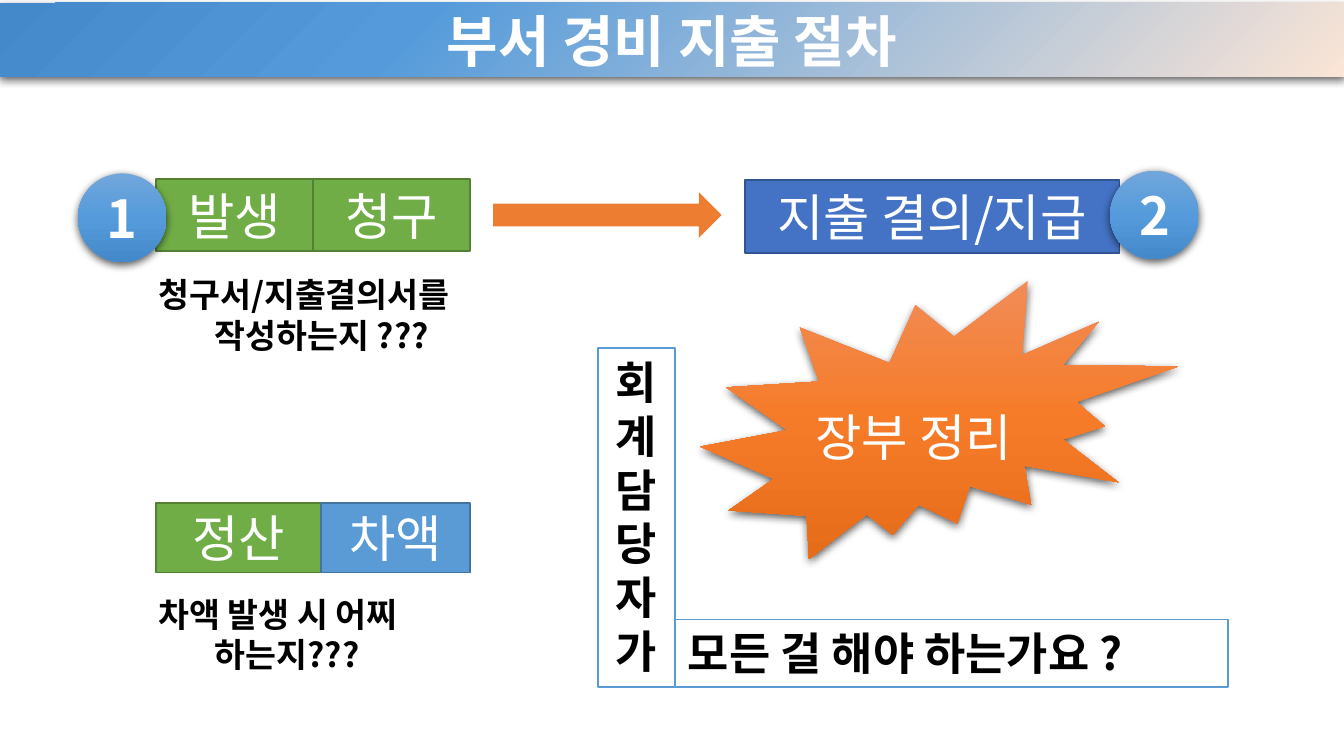
from dataclasses import dataclass

from lxml import etree
from pptx import Presentation
from pptx.dml.color import RGBColor
from pptx.enum.shapes import MSO_SHAPE
from pptx.enum.text import MSO_ANCHOR, PP_ALIGN
from pptx.oxml.ns import qn
from pptx.util import Inches, Pt

RECTANGLE, OVAL = MSO_SHAPE.RECTANGLE, MSO_SHAPE.OVAL
ARROW, BURST = MSO_SHAPE.RIGHT_ARROW, MSO_SHAPE.EXPLOSION2
LEFT, CENTER = PP_ALIGN.LEFT, PP_ALIGN.CENTER
TOP, MIDDLE = MSO_ANCHOR.TOP, MSO_ANCHOR.MIDDLE


@dataclass(frozen=True)
class Theme:
    """Colours and type sizes of the slide."""
    font: str = "Noto Sans CJK KR"
    title: int = 30
    badge: int = 28
    step: int = 27
    question: int = 24
    note: int = 18
    white: str = "FFFFFF"
    black: str = "000000"
    orange: str = "ED7D31"
    green: tuple = ("70AD47", "538035")
    indigo: tuple = ("4472C4", "325491")
    blue: tuple = ("5B9BD5", "43739E")
    frame: tuple = ("FFFFFF", "5B9BD5")
    banner: tuple = ((0, "FBE5D6"), (69, "559BDB"), (100, "448ACA"))
    glossy_blue: tuple = ((0, "71A6DB"), (50, "559BDB"), (100, "448ACA"))
    glossy_orange: tuple = ((0, "F18C57"), (50, "F67B28"), (100, "E56C19"))


THEME = Theme()


def add_element(parent, tag, **attributes):
    """Append a DrawingML child with the given attributes."""
    values = {name: str(value) for name, value in attributes.items()}
    return etree.SubElement(parent, qn(f"a:{tag}"), values)


def write(shape, lines, size, color, bold=False, align=CENTER, anchor=MIDDLE, indent=0):
    """Write one paragraph per line, indenting all lines after the first."""
    frame = shape.text_frame
    frame.word_wrap = True
    frame.vertical_anchor = anchor
    for index, line in enumerate(lines):
        paragraph = frame.add_paragraph() if index else frame.paragraphs[0]
        paragraph.alignment = align
        if index and indent:
            paragraph._p.get_or_add_pPr().set("marL", str(Inches(indent)))
        run = paragraph.add_run()
        run.text = line
        run.font.size, run.font.bold, run.font.name = Pt(size), bold, THEME.font
        run.font.color.rgb = RGBColor.from_string(color)
        add_element(run._r.get_or_add_rPr(), "ea", typeface=THEME.font)


def add_block(slide, kind, box, fill, outline=None):
    """Add a flat preset shape with an optional outline."""
    shape = slide.shapes.add_shape(kind, *map(Inches, box))
    shape.shadow.inherit = False
    shape.fill.solid()
    shape.fill.fore_color.rgb = RGBColor.from_string(fill)
    if outline:
        shape.line.color.rgb = RGBColor.from_string(outline)
        shape.line.width = Pt(1)
    else:
        shape.line.fill.background()
    return shape


def add_glossy(slide, kind, box, stops, radial=False):
    """Add a preset shape with a gradient fill and a soft shadow."""
    shape = add_block(slide, kind, box, stops[0][1])
    properties = shape._element.spPr
    solid = properties.find(qn("a:solidFill"))
    gradient = etree.Element(qn("a:gradFill"), rotWithShape="1")
    properties.replace(solid, gradient)
    stop_list = add_element(gradient, "gsLst")
    for position, color in stops:
        stop = add_element(stop_list, "gs", pos=position * 1000)
        add_element(stop, "srgbClr", val=color)
    if radial:
        circle = add_element(gradient, "path", path="circle")
        add_element(circle, "fillToRect", l=100000, t=100000)
    else:
        add_element(gradient, "lin", ang=5400000, scaled=0)
    shadow = add_element(properties.find(qn("a:effectLst")), "outerShdw",
                         blurRad=Pt(4.5), dist=Pt(1.5), dir=5400000,
                         algn="ctr", rotWithShape=0)
    color = add_element(shadow, "srgbClr", val=THEME.black)
    add_element(color, "alpha", val=63000)
    return shape


def add_step(slide, text, box, colors):
    """Add a labelled box of the procedure."""
    write(add_block(slide, RECTANGLE, box, *colors), [text], THEME.step, THEME.white)


def add_note(slide, lines, box):
    """Add a bold question below a row of steps."""
    shape = slide.shapes.add_textbox(*map(Inches, box))
    write(shape, lines, THEME.note, THEME.black, True, LEFT, TOP, indent=0.42)


def add_question(slide, lines, box, align):
    """Add a framed part of the closing question."""
    shape = add_block(slide, RECTANGLE, box, *THEME.frame)
    write(shape, lines, THEME.question, THEME.black, True, align, TOP)


def add_badge(slide, number, left, top):
    """Add a numbered circle."""
    shape = add_glossy(slide, OVAL, (left, top, 0.66, 0.66), THEME.glossy_blue)
    write(shape, [number], THEME.badge, THEME.white, True)


def main():
    """Build the expense procedure slide."""
    presentation = Presentation()
    presentation.slide_width = Inches(10)
    presentation.slide_height = presentation.slide_width * 9 // 16
    slide = presentation.slides.add_slide(presentation.slide_layouts[6])
    column, width = 1.16, 1.17

    add_step(slide, "발생", (column, 1.33, width, 0.54), THEME.green)
    add_block(slide, ARROW, (3.67, 1.43, 1.7, 0.34), THEME.orange)
    banner = add_glossy(slide, RECTANGLE, (0, 0.02, 10, 0.55), THEME.banner, radial=True)
    write(banner, ["부서 경비 지출 절차"], THEME.title, THEME.white, True)
    add_step(slide, "지출 결의/지급", (5.54, 1.34, 2.79, 0.54), THEME.indigo)
    add_step(slide, "청구", (column + width, 1.33, width, 0.54), THEME.green)
    add_note(slide, ["청구서/지출결의서를", "작성하는지 ???"], (1.08, 1.99, 2.74, 0.71))

    add_step(slide, "정산", (column, 3.74, 1.23, 0.52), THEME.green)
    add_step(slide, "차액", (column + 1.23, 3.74, 1.11, 0.52), THEME.blue)
    add_note(slide, ["차액 발생 시 어찌", "하는지???"], (1.08, 4.37, 2.66, 0.71))

    add_question(slide, ["회", "계", "담", "당자", "가"], (4.45, 2.59, 0.57, 2.52), CENTER)
    add_question(slide, ["모든 걸 해야 하는가요 ?"], (5.02, 4.61, 4.12, 0.5), LEFT)

    add_badge(slide, "1", 0.58, 1.29)
    add_glossy(slide, BURST, (5.21, 2.09, 3.56, 2.07), THEME.glossy_orange)
    label = slide.shapes.add_textbox(*map(Inches, (5.86, 2.97, 1.88, 0.56)))
    write(label, ["장부 정리"], THEME.step, THEME.white, anchor=TOP)
    add_badge(slide, "2", 8.26, 1.27)
    presentation.save("out.pptx")


if __name__ == "__main__":
    main()
